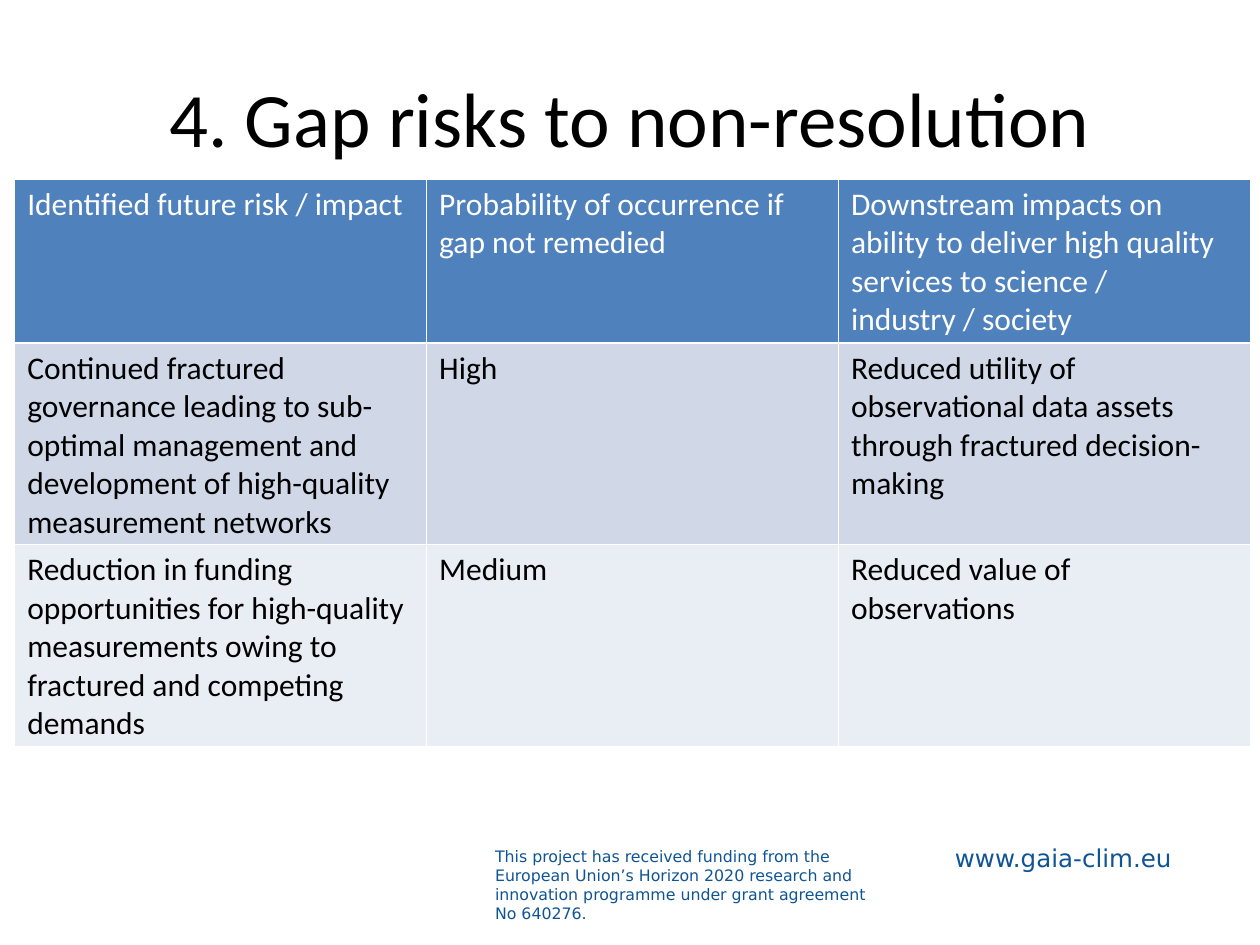
import pptx
import pptx.dml.color
import pptx.enum.text
import pptx.util

Pt = pptx.util.Pt
RGBColor = pptx.dml.color.RGBColor
PP_ALIGN = pptx.enum.text.PP_ALIGN
MSO_ANCHOR = pptx.enum.text.MSO_ANCHOR

BLACK = RGBColor(0x00, 0x00, 0x00)
WHITE = RGBColor(0xFF, 0xFF, 0xFF)
HEADER_BLUE = RGBColor(0x4F, 0x81, 0xBD)
FOOTER_BLUE = RGBColor(0x0F, 0x54, 0x94)
ROW_FILLS = [HEADER_BLUE, RGBColor(0xD0, 0xD8, 0xE8), RGBColor(0xE9, 0xED, 0xF4)]

RISKS = [
    ("Identified future risk / impact",
     "Probability of occurrence if gap not remedied",
     "Downstream impacts on ability to deliver high quality services to "
     "science / industry / society"),
    ("Continued fractured governance leading to sub-optimal management and "
     "development of high-quality measurement networks",
     "High",
     "Reduced utility of observational data assets through fractured "
     "decision-making"),
    ("Reduction in funding opportunities for high-quality measurements owing "
     "to fractured and competing demands",
     "Medium",
     "Reduced value of observations"),
]
COLUMN_WIDTH = Pt(235.4)
ROW_HEIGHT = Pt(29.2)  # minimum; rows grow with their text
TABLE_HEIGHT = Pt(324)


def write(frame, text, size, color, font="Calibri", align=PP_ALIGN.LEFT):
    """Put one formatted paragraph into a text frame."""
    paragraph = frame.paragraphs[0]
    paragraph.alignment = align
    run = paragraph.add_run()
    run.text = text
    run.font.name = font
    run.font.size = Pt(size)
    run.font.bold = False
    run.font.color.rgb = color


def add_title(slide, text):
    title = slide.shapes.title
    title.left, title.top, title.width, title.height = Pt(36), Pt(21.6), Pt(648), Pt(90)
    title.text_frame.vertical_anchor = MSO_ANCHOR.MIDDLE
    write(title.text_frame, text, size=44, color=BLACK, align=PP_ALIGN.CENTER)


def add_risk_table(slide):
    table_frame = slide.shapes.add_table(
        len(RISKS), len(RISKS[0]), Pt(8.4), Pt(102.4),
        COLUMN_WIDTH * len(RISKS[0]), TABLE_HEIGHT)
    table = table_frame.table
    for column in table.columns:
        column.width = COLUMN_WIDTH
    for r, (risk, fill) in enumerate(zip(RISKS, ROW_FILLS)):
        table.rows[r].height = ROW_HEIGHT
        for c, text in enumerate(risk):
            cell = table.cell(r, c)
            cell.fill.solid()
            cell.fill.fore_color.rgb = fill
            write(cell.text_frame, text, size=18, color=BLACK if r else WHITE)
    table_frame.height = TABLE_HEIGHT


def add_footer(slide, text, left, top, width, height, size):
    footer = slide.shapes.add_textbox(Pt(left), Pt(top), Pt(width), Pt(height))
    footer.text_frame.word_wrap = True
    footer.text_frame.auto_size = pptx.enum.text.MSO_AUTO_SIZE.SHAPE_TO_FIT_TEXT
    write(footer.text_frame, text, size=size, color=FOOTER_BLUE, font="DejaVu Sans")


def main():
    deck = pptx.Presentation()
    deck.slide_width, deck.slide_height = Pt(720), Pt(540)
    slide = deck.slides.add_slide(deck.slide_layouts[5])  # Title Only

    # Funding note and web address
    add_footer(slide,
               "This project has received funding from the European Union’s "
               "Horizon 2020 research and innovation programme under grant "
               "agreement No 640276.",
               left=275.8, top=480.2, width=236.2, height=51.1, size=9)
    add_footer(slide, "www.gaia-clim.eu",
               left=538.6, top=478.1, width=149, height=24.5, size=14)

    # Heading and risk table
    add_title(slide, "4. Gap risks to non-resolution")
    add_risk_table(slide)

    deck.save("out.pptx")


if __name__ == "__main__":
    main()
